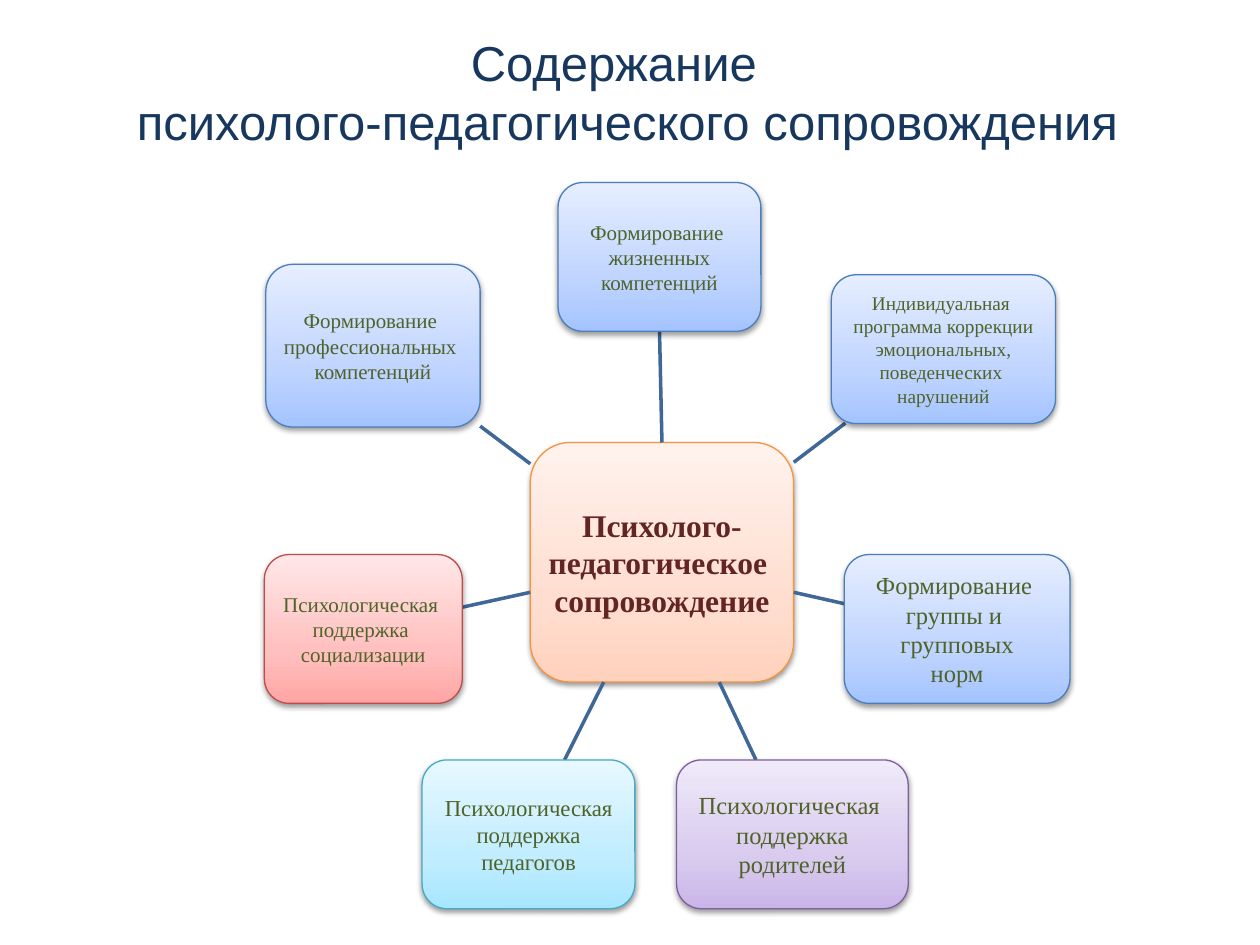
from copy import deepcopy

from lxml import etree
from pptx import Presentation
from pptx.dml.color import RGBColor
from pptx.enum.shapes import MSO_CONNECTOR, MSO_SHAPE
from pptx.enum.text import MSO_ANCHOR, MSO_AUTO_SIZE, PP_ALIGN
from pptx.oxml import parse_xml
from pptx.oxml.ns import nsdecls, qn
from pptx.util import Cm, Pt

STRAIGHT = MSO_CONNECTOR.STRAIGHT
ROUNDED = MSO_SHAPE.ROUNDED_RECTANGLE
MIDDLE = MSO_ANCHOR.MIDDLE
CENTER = PP_ALIGN.CENTER
GROW = MSO_AUTO_SIZE.SHAPE_TO_FIT_TEXT

NAVY = RGBColor(0x17, 0x37, 0x5E)
MAROON = RGBColor(0x63, 0x25, 0x23)
OLIVE = RGBColor(0x4F, 0x62, 0x28)
LINK = RGBColor(0x3F, 0x67, 0x97)

ORANGE = [RGBColor.from_string(c) for c in ("FFD2BD", "FFDED0", "FFF2ED", "F69240")]
BLUE = [RGBColor.from_string(c) for c in ("A4C4FF", "BFD4FF", "E6EEFF", "4B7EBC")]
PURPLE = [RGBColor.from_string(c) for c in ("C9B5E8", "D8CBEE", "F0EAF9", "7D60A0")]
CYAN = [RGBColor.from_string(c) for c in ("A7E6FF", "C1EDFF", "E7F8FF", "46AAC5")]
RED = [RGBColor.from_string(c) for c in ("FFA6A5", "FFC0BF", "FFE7E7", "BF4C48")]

SHADOW = (
    f'<a:effectLst {nsdecls("a")}><a:outerShdw blurRad="40000" dist="20000" '
    'dir="5400000" rotWithShape="0"><a:srgbClr val="000000">'
    '<a:alpha val="38000"/></a:srgbClr></a:outerShdw></a:effectLst>'
)


def write(tf, lines, font):
    for i, line in enumerate(lines):
        p = tf.paragraphs[0] if i == 0 else tf.add_paragraph()
        p.alignment = CENTER
        p.text = line
        for r in p.runs:
            r.font.color.rgb = font["color"]
            for key in ("name", "size", "bold"):
                setattr(r.font, key, font[key])


def add_box(shapes, at, palette, lines, font, inset):
    sp = shapes.add_shape(ROUNDED, *[Cm(v) for v in at])
    sp.fill.gradient()
    sp.fill.gradient_angle = 90
    gs_list = sp._element.spPr.find(qn("a:gradFill")).find(qn("a:gsLst"))
    gs_list.insert(1, deepcopy(gs_list[0]))
    for stop, pos, color in zip(sp.fill.gradient_stops, (0, 0.35, 1), palette):
        stop.position = pos
        stop.color.rgb = color
    sp.line.color.rgb = palette[3]
    sp.line.width = Pt(0.75)
    sp._element.spPr.append(parse_xml(SHADOW))
    tf = sp.text_frame
    fmt = {"word_wrap": True, "vertical_anchor": MIDDLE}
    for side in ("left", "top", "right", "bottom"):
        fmt[f"margin_{side}"] = Cm(inset)
    for key, value in fmt.items():
        setattr(tf, key, value)
    write(tf, lines, font)
    return sp


prs = Presentation()
prs.slide_width = Cm(25.4)
prs.slide_height = Cm(19.05)
s = prs.slides.add_slide(prs.slide_layouts[6])

center = add_box(
    s.shapes, (10.69, 8.92, 5.31, 4.83), ORANGE,
    ["Психолого-", "педагогическое ", "сопровождение"],
    {"name": "Times New Roman", "size": Pt(18), "bold": True, "color": MAROON}, 0.13,
)

TOPICS = [
    ((11.25, 3.68, 4.09, 3), (13.34, 8.92, 13.3, 6.68), BLUE, 12,
     ["Формирование ", "жизненных компетенций"]),
    ((16.76, 5.54, 4.52, 3), (16, 9.32, 17.04, 8.53), BLUE, 11,
     ["Индивидуальная ", "программа коррекции",
      "эмоциональных, поведенческих ", "нарушений"]),
    ((17.02, 11.18, 4.55, 3), (16, 11.94, 17.02, 12.17), BLUE, 14,
     ["Формирование ", "группы и ", "групповых", "норм"]),
    ((13.64, 15.32, 4.67, 3), (14.5, 13.75, 15.24, 15.32), PURPLE, 14,
     ["Психологическая ", "поддержка", "родителей"]),
    ((8.51, 15.32, 4.29, 3), (12.17, 13.75, 11.38, 15.32), CYAN, 13,
     ["Психологическая", " поддержка ", "педагогов"]),
    ((5.33, 11.18, 3.99, 3), (10.69, 11.94, 9.32, 12.24), RED, 12,
     ["Психологическая ", "поддержка ", "социализации"]),
    ((5.36, 5.33, 4.32, 3.28), (10.69, 9.35, 9.68, 8.59), BLUE, 12,
     ["Формирование ", "профессиональных ", "компетенций"]),
]

for i, (at, ends, palette, size, lines) in enumerate(TOPICS):
    link = s.shapes.add_connector(STRAIGHT, *[Cm(v) for v in ends])
    link.line.color.rgb = LINK
    link.line.width = Pt(2)
    etree.SubElement(link._element.spPr, qn("a:effectLst"))
    font = {"name": "Times New Roman", "size": Pt(size), "bold": False, "color": OLIVE}
    sp = add_box(s.shapes, at, palette, lines, font, 0.09)
    if i == 0:
        link.begin_connect(center, 0)
        link.end_connect(sp, 2)

title = s.shapes.add_textbox(Cm(0.71), Cm(0.53), Cm(23.6), Cm(2.64))
tf = title.text_frame
for key, value in {"word_wrap": True, "auto_size": GROW}.items():
    setattr(tf, key, value)
write(
    tf, ["Cодержание \v психолого-педагогического сопровождения"],
    {"name": "Arial", "size": Pt(28), "bold": False, "color": NAVY},
)

prs.save("out.pptx")
